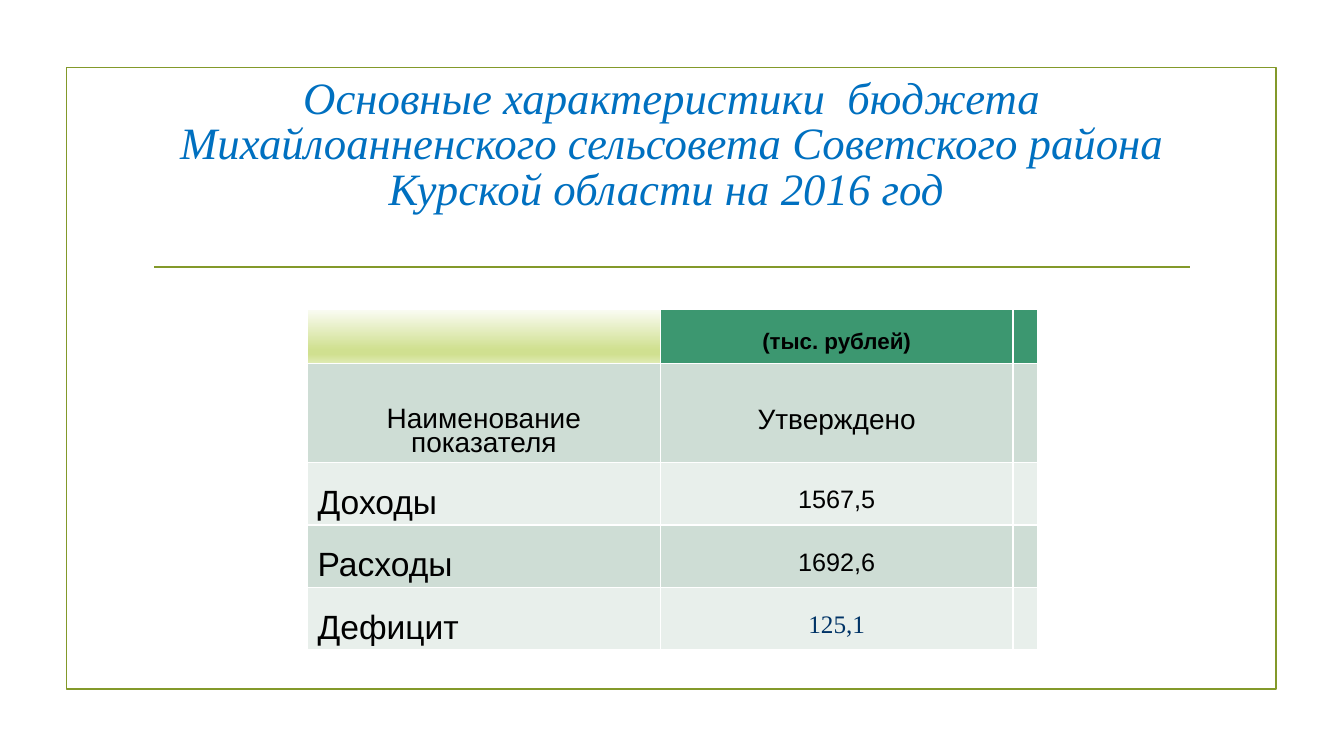
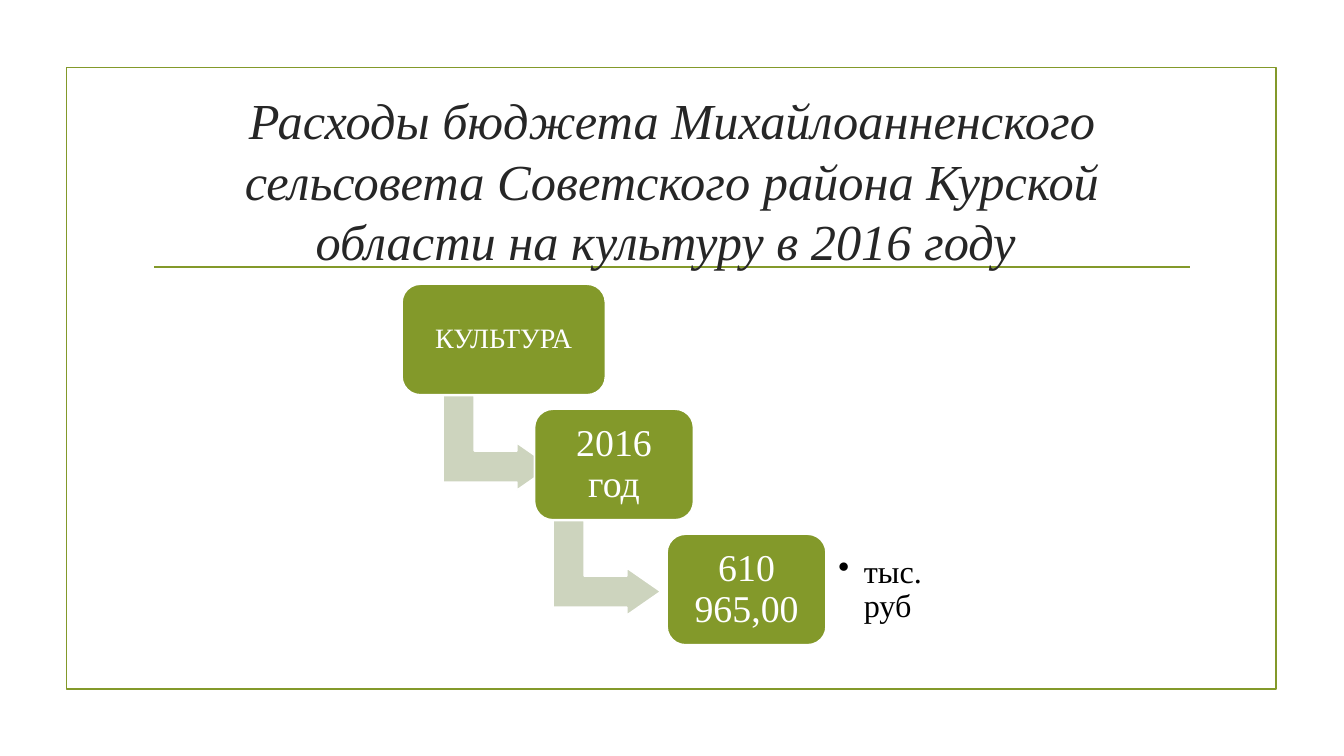
from dataclasses import dataclass

from pptx import Presentation
from pptx import util as u
from pptx.dml.color import RGBColor
from pptx.enum import shapes, text
from pptx.oxml import parse_xml
from pptx.oxml.ns import nsdecls, qn
from lxml import etree

Cm, Pt = u.Cm, u.Pt
SERIF, SANS = "Times New Roman", "Arial"
OLIVE, PALE, WHITE, BLACK = "83992A", "CDD4BE", "FFFFFF", "000000"
GREEN, BANDS = "3C9770", ("CEDDD5", "E8EFEB")
FADE = ((0, "FAFCF3"), (74, "D0E090"), (83, "D0E090"), (100, "E0EBB5"))
CENTER, LEFT = text.PP_ALIGN.CENTER, text.PP_ALIGN.LEFT
MIDDLE, TOP = text.MSO_ANCHOR.MIDDLE, text.MSO_ANCHOR.TOP


@dataclass
class Entry:
    """Text of one table cell; inset is its top margin in cm."""
    words: str
    size: float
    inset: float
    align: int = CENTER
    anchor: int = MIDDLE
    font: str = SANS
    color: str = BLACK
    bold: bool = False


@dataclass
class Step:
    words: str
    width: float
    size: float
    inset: float


def rgb(code: str) -> RGBColor:
    return RGBColor.from_string(code)


def style(par, font: str, size: float, color: str, align=CENTER, space=1.0,
          bold=False, italic=False) -> None:
    par.alignment, par.line_spacing = align, space
    face = par.font
    face.name, face.size, face.bold, face.italic = font, Pt(size), bold, italic
    face.color.rgb = rgb(color)


def margins(frame, size: float) -> None:
    frame.margin_left = frame.margin_right = Cm(size)
    frame.margin_top = frame.margin_bottom = Cm(size)


def shape(slide, kind, box, fill=None, line=OLIVE):
    item = slide.shapes.add_shape(kind, *map(Cm, box))
    item.shadow.inherit = False
    if fill:
        item.fill.solid()
        item.fill.fore_color.rgb = rgb(fill)
    else:
        item.fill.background()
    item.line.color.rgb = rgb(line)
    item.line.width = Pt(1.25)
    return item


def add_decor(slide, layout) -> None:
    """Draw the border and the title rule, then hand them to the layout."""
    border = shape(slide, shapes.MSO_SHAPE.RECTANGLE, (1.68, 1.7, 30.48, 15.67))
    rule = slide.shapes.add_connector(
        shapes.MSO_CONNECTOR.STRAIGHT, Cm(3.89), Cm(6.73), Cm(30), Cm(6.73))
    rule.line.color.rgb = rgb(OLIVE)
    rule.line.width = Pt(1.25)
    etree.SubElement(rule.element.spPr, qn("a:effectLst"))
    for item in (border, rule):
        layout.shapes.element.append(item.element)


def set_title(slide, words: str, top: float, size: float, color: str,
              space=1.0, anchor=MIDDLE) -> None:
    title = slide.shapes.title
    title.left, title.top, title.width, title.height = map(
        Cm, (3.6, top, 26.67, 3.63))
    frame = title.text_frame
    frame.text = words
    frame.word_wrap = True
    frame.auto_size = text.MSO_AUTO_SIZE.NONE
    frame.vertical_anchor = anchor
    style(frame.paragraphs[0], SERIF, size, color, space=space, italic=True)


def fade(cell) -> None:
    stops = "".join(f'<a:gs pos="{pos * 1000}"><a:srgbClr val="{code}"/></a:gs>'
                    for pos, code in FADE)
    cell._tc.get_or_add_tcPr().append(parse_xml(
        f'<a:gradFill {nsdecls("a")}><a:gsLst>{stops}</a:gsLst>'
        '<a:lin ang="5400000" scaled="0"/></a:gradFill>'))


def add_budget(slide, rows) -> None:
    widths, heights = (8.89, 8.89, 0.58), (1.36, 2.49, 1.57, 1.57, 1.57)
    table = slide.shapes.add_table(
        len(heights), len(widths), Cm(7.75), Cm(7.8),
        Cm(sum(widths)), Cm(sum(heights))).table
    for col, width in zip(table.columns, widths):
        col.width = Cm(width)
    for row, height in zip(table.rows, heights):
        row.height = Cm(height)
    for r, row in enumerate(rows):
        for c, entry in enumerate(row):
            cell = table.cell(r, c)
            if r == c == 0:
                fade(cell)
            else:
                cell.fill.solid()
                cell.fill.fore_color.rgb = rgb(BANDS[(r - 1) % 2] if r else GREEN)
            if entry:
                cell.text = entry.words
                cell.margin_top = Cm(entry.inset)
                cell.vertical_anchor = entry.anchor
                style(cell.text_frame.paragraphs[0], entry.font, entry.size,
                      entry.color, entry.align, 0.78, entry.bold)


def add_arrow(slide, index: int) -> None:
    arrow = shape(slide, shapes.MSO_SHAPE.BENT_UP_ARROW,
                  (11.33 + 2.77 * index, 9.8 + 3.15 * index, 2.39, 2.72),
                  PALE, WHITE)
    arrow.rotation = 90
    for i, value in enumerate((0.33, 0.25, 0.36)):
        arrow.adjustments[i] = value


def add_steps(slide, steps) -> None:
    for i, step in enumerate(steps):
        if i < len(steps) - 1:
            add_arrow(slide, i)
        box = shape(slide, shapes.MSO_SHAPE.ROUNDED_RECTANGLE,
                    (10.13 + 3.34 * i, 7.16 + 3.15 * i, step.width, 2.79),
                    OLIVE, WHITE)
        frame = box.text_frame
        frame.text = step.words
        frame.word_wrap = True
        frame.vertical_anchor = MIDDLE
        margins(frame, step.inset)
        style(frame.paragraphs[0], SERIF, step.size, WHITE, space=0.9)


def add_unit(slide, words: str) -> None:
    """Bulleted unit beside the last step."""
    frame = slide.shapes.add_textbox(
        *map(Cm, (20.83, 13.74, 2.92, 2.26))).text_frame
    frame.word_wrap = True
    frame.vertical_anchor = MIDDLE
    margins(frame, 0.3)
    par = frame.paragraphs[0]
    par.text = words
    props = par._p.get_or_add_pPr()
    props.set("marL", str(Cm(0.64)))
    props.set("indent", str(-Cm(0.64)))
    etree.SubElement(props, qn("a:buChar")).set("char", "•")
    style(par, SERIF, 23, BLACK, LEFT, 0.9)


def main() -> None:
    deck = Presentation()
    deck.slide_width, deck.slide_height = Cm(33.87), Cm(19.05)
    layout = deck.slide_layouts[5]

    # Budget table
    slide = deck.slides.add_slide(layout)
    add_decor(slide, layout)
    set_title(slide, "Основные характеристики  бюджета Михайлоанненского "
              "сельсовета Советского района Курской области на 2016 год ",
              1.83, 32, "0070C0", 0.85, TOP)
    add_budget(slide, [
        (None, Entry("(тыс. рублей)", 16, 0.51, bold=True), None),
        (Entry("Наименование показателя", 20, 1.14, anchor=TOP),
         Entry("Утверждено", 20, 0.61), None),
        (Entry("Доходы", 24, 0.71, LEFT), Entry("1567,5", 18, 0.56), None),
        (Entry("Расходы", 24, 0.71, LEFT), Entry("1692,6", 18, 0.56), None),
        (Entry("Дефицит", 24, 0.71, LEFT),
         Entry("125,1", 18, 0.56, font=SERIF, color="003366"), None),
    ])

    # Culture spending steps
    slide = deck.slides.add_slide(layout)
    set_title(slide, "Расходы бюджета Михайлоанненского сельсовета Советского "
              "района Курской области на культуру в 2016 году ",
              2.72, 36, "262626")
    add_steps(slide, [
        Step("КУЛЬТУРА", 5.13, 20, 0.2),
        Step("2016 год", 4.01, 27, 0.28),
        Step("610 965,00", 4.01, 27, 0.28),
    ])
    add_unit(slide, "тыс. руб")

    deck.save("out.pptx")


if __name__ == "__main__":
    main()
